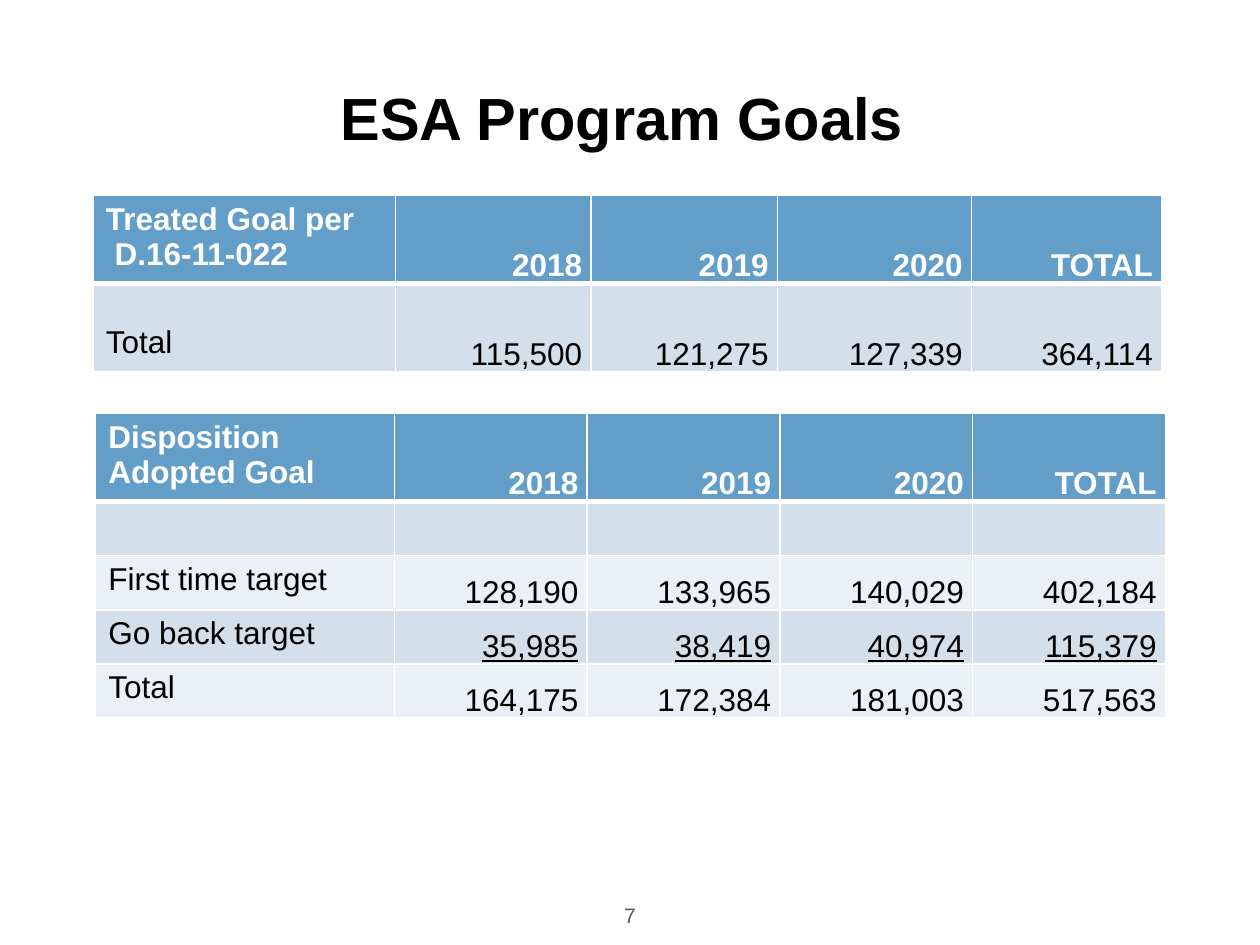
import pptx
import pptx.util
import pptx.dml.color
import pptx.enum.text
import pptx.oxml
import pptx.oxml.ns
from pptx.util import Inches

RGBColor = pptx.dml.color.RGBColor
ALIGN = pptx.enum.text.PP_ALIGN
ANCHOR = pptx.enum.text.MSO_ANCHOR

BLACK = RGBColor(0x00, 0x00, 0x00)
WHITE = RGBColor(0xFF, 0xFF, 0xFF)
GRAY = RGBColor(0x61, 0x54, 0x52)
HEADER = RGBColor(0x63, 0x9E, 0xC8)
BANDS = [RGBColor(0xD3, 0xDF, 0xEB), RGBColor(0xEA, 0xF0, 0xF5)]


class GoalSlide:
    font = "Arial"
    body_size = 18

    def __init__(self, prs):
        self.s = prs.slides.add_slide(prs.slide_layouts[6])

    def run(self, p, text, size, color, bold=False, underline=False):
        r = p.add_run()
        r.text = text
        r.font.name = self.font
        r.font.size = pptx.util.Pt(size)
        r.font.color.rgb = color
        r.font.bold = bold
        r.font.underline = underline

    def text(self, box, text, size, color, bold=False):
        sp = self.s.shapes.add_textbox(*map(Inches, box))
        tf = sp.text_frame
        tf.word_wrap = True
        tf.vertical_anchor = ANCHOR.MIDDLE
        p = tf.paragraphs[0]
        p.alignment = ALIGN.CENTER
        self.run(p, text, size, color, bold)

    def borders(self, cell, top, bottom):
        tcPr = cell._tc.get_or_add_tcPr()
        for side, width in (("L", 1), ("R", 1), ("T", top), ("B", bottom)):
            tcPr.append(pptx.oxml.parse_xml(
                f'<a:ln{side} {pptx.oxml.ns.nsdecls("a")} w="{pptx.util.Pt(width)}">'
                f'<a:solidFill><a:srgbClr val="{WHITE}"/></a:solidFill></a:ln{side}>'))

    def table(self, left, top, widths, heights, rows, spacing=None,
              underlined=None, label_top=0.05):
        frame = self.s.shapes.add_table(
            len(rows), len(widths), Inches(left), Inches(top),
            Inches(sum(widths)), Inches(sum(heights)))
        table = frame.table
        for col, width in zip(table.columns, widths):
            col.width = Inches(width)
        for i, (row, height) in enumerate(zip(rows, heights)):
            table.rows[i].height = Inches(height)
            head = i == 0
            for j, value in enumerate(row):
                cell = table.cell(i, j)
                self.borders(cell, 3 if i == 1 else 1, 3 if head else 1)
                cell.fill.solid()
                cell.fill.fore_color.rgb = HEADER if head else BANDS[(i - 1) % 2]
                number = j > 0
                if number:
                    cell.vertical_anchor = ANCHOR.BOTTOM
                    cell.margin_left = cell.margin_right = Inches(0.07)
                    cell.margin_top = cell.margin_bottom = 0
                elif not head:
                    cell.margin_top = Inches(label_top)
                tf = cell.text_frame
                for k, line in enumerate(value.split("\n")):
                    p = tf.add_paragraph() if k else tf.paragraphs[0]
                    p.font.size = pptx.util.Pt(self.body_size)
                    if number:
                        p.alignment = ALIGN.RIGHT
                        if spacing and not head:
                            p.line_spacing = spacing
                    if line:
                        self.run(p, line, self.body_size, WHITE if head else BLACK,
                                 head, number and i == underlined)


def main():
    prs = pptx.Presentation()
    prs.slide_width, prs.slide_height = Inches(10), Inches(7.5)
    slide = GoalSlide(prs)
    years = ["2018", "2019", "2020", "TOTAL"]

    # Title
    slide.text((0.5, 0.3, 9, 1.25), "ESA Program Goals ", 34, BLACK, True)

    # Treated goals
    slide.table(0.74, 1.55, [2.4, 1.55, 1.48, 1.54, 1.51], [0.66, 0.7], [
        ["Treated Goal per\n D.16-11-022", *years],
        ["Total", "115,500", "121,275", "127,339", "364,114"],
    ], label_top=0.33)

    # Adopted goals
    slide.table(0.76, 3.28, [2.37] + [1.53] * 4, [0.65] + [0.43] * 4, [
        ["Disposition Adopted Goal", *years],
        [""] * 5,
        ["First time target", "128,190", "133,965", "140,029", "402,184"],
        ["Go back target", "35,985", "38,419", "40,974", "115,379"],
        ["Total", "164,175", "172,384", "181,003", "517,563"],
    ], spacing=1.07, underlined=3)

    # Page number
    slide.text((4.53, 7.12, 0.94, 0.29), "7", 12, GRAY)

    prs.save("out.pptx")


if __name__ == "__main__":
    main()
